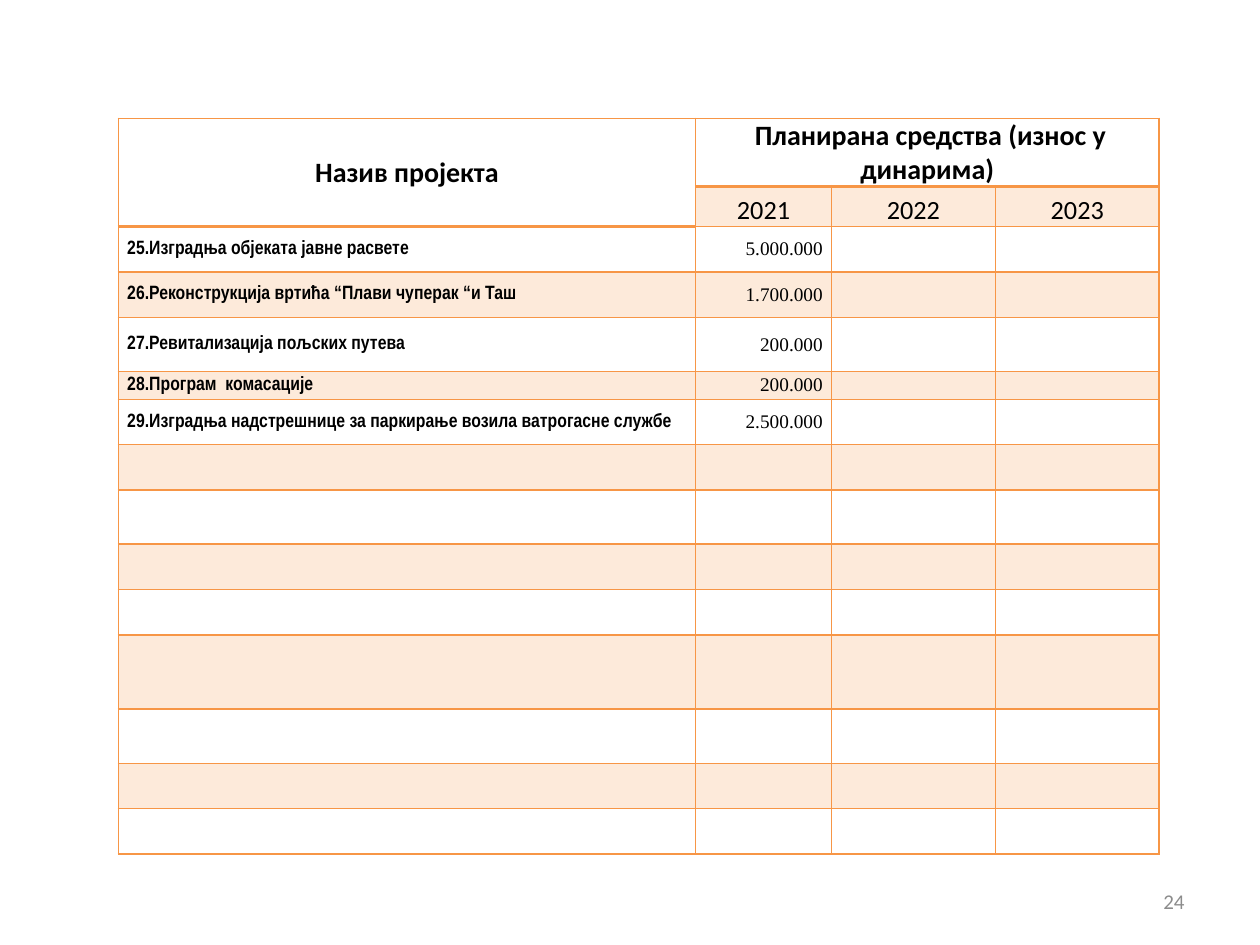
from dataclasses import dataclass

from lxml.etree import SubElement
from pptx import Presentation
from pptx.dml.color import RGBColor
from pptx.enum.text import MSO_ANCHOR as Anchor, PP_ALIGN as Align
from pptx.oxml.ns import qn
from pptx.util import Inches, Pt


@dataclass(frozen=True)
class Theme:
    accent: str = "F79646"
    ink: str = "000000"
    muted: str = "8C8C8C"
    band_alpha: int = 20000
    heading_font: str = "Calibri"
    project_font: str = "Arial Narrow"
    amount_font: str = "Times New Roman"
    heading_size: int = 16
    year_size: int = 15
    body_size: int = 11
    number_size: int = 12
    thin: int = 1
    heavy: int = 2


THEME = Theme()

COLUMN_WIDTHS = [4.58, 1.08, 1.3, 1.3]
ROW_HEIGHTS = [0.54, 0.32, 0.36, 0.36, 0.43, 0.22, 0.36, 0.36,
               0.43, 0.36, 0.36, 0.59, 0.43, 0.36, 0.36]
YEARS = ["2021", "2022", "2023"]
PROJECTS = [
    ("25.Изградња објеката јавне расвете", "5.000.000"),
    ("26.Реконструкција вртића “Плави чуперак “и Таш", "1.700.000"),
    ("27.Ревитализација пољских путева", "200.000"),
    ("28.Програм  комасације", "200.000"),
    ("29.Изградња надстрешнице за паркирање возила ватрогасне службе", "2.500.000"),
]
# Cells whose top edge closes a heading
HEAVY_TOPS = {(1, 1), (1, 2), (1, 3), (2, 0)}


def write(frame, text, font, size, color=THEME.ink, bold=False, align=Align.LEFT):
    frame.text = text
    paragraph = frame.paragraphs[0]
    paragraph.alignment = align
    for run in paragraph.runs:
        run.font.name = font
        run.font.size = Pt(size)
        run.font.bold = bold
        run.font.color.rgb = RGBColor.from_string(color)


def style_cell(cell, row, column):
    """Border, band and margins of one cell, set by its place in the grid."""
    cell.margin_left = cell.margin_right = Inches(0.07)
    cell.margin_top = cell.margin_bottom = 0
    cell.vertical_anchor = Anchor.MIDDLE
    properties = cell._tc.get_or_add_tcPr()
    heavy_edges = {
        "lnT": (row, column) in HEAVY_TOPS,
        "lnB": (row + 1, column) in HEAVY_TOPS or (row, column) == (0, 0),
    }
    for edge in ("lnL", "lnR", "lnT", "lnB"):
        width = THEME.heavy if heavy_edges.get(edge) else THEME.thin
        line = SubElement(properties, qn(f"a:{edge}"), w=str(Pt(width)))
        fill = SubElement(line, qn("a:solidFill"))
        SubElement(fill, qn("a:srgbClr"), val=THEME.accent)

    if row % 2 and (row, column) != (1, 0):
        cell.fill.solid()
        cell.fill.fore_color.rgb = RGBColor.from_string(THEME.accent)
        tint = properties.find(f"{qn('a:solidFill')}/{qn('a:srgbClr')}")
        SubElement(tint, qn("a:alpha"), val=str(THEME.band_alpha))
    else:
        cell.fill.background()

    # Keeps empty cells from stretching the low rows
    paragraph = cell.text_frame.paragraphs[0]
    SubElement(paragraph._p, qn("a:endParaRPr"), sz=str(THEME.body_size * 100))


def add_budget_table(slide, left, top, width, height):
    table = slide.shapes.add_table(
        len(ROW_HEIGHTS), len(COLUMN_WIDTHS), left, top, width, height).table
    table.first_row = table.horz_banding = False
    for column, size in zip(table.columns, COLUMN_WIDTHS):
        column.width = Inches(size)
    for row, size in zip(table.rows, ROW_HEIGHTS):
        row.height = Inches(size)
    for r in range(len(ROW_HEIGHTS)):
        for c in range(len(COLUMN_WIDTHS)):
            style_cell(table.cell(r, c), r, c)

    # Headings
    project_heading, funds_heading = table.cell(0, 0), table.cell(0, 1)
    project_heading.merge(table.cell(1, 0))
    funds_heading.merge(table.cell(0, 3))
    funds_heading.vertical_anchor = Anchor.BOTTOM
    for heading, text in ((project_heading, "Назив пројекта"),
                          (funds_heading, " Планирана средства (износ у динарима)")):
        write(heading.text_frame, text, THEME.heading_font, THEME.heading_size,
              bold=True, align=Align.CENTER)
    for c, year in enumerate(YEARS, start=1):
        year_cell = table.cell(1, c)
        year_cell.vertical_anchor = Anchor.BOTTOM
        write(year_cell.text_frame, year, THEME.heading_font, THEME.year_size,
              align=Align.CENTER)

    # Projects and their amounts
    for r, (project, amount) in enumerate(PROJECTS, start=2):
        write(table.cell(r, 0).text_frame, project, THEME.project_font,
              THEME.body_size, bold=True)
        write(table.cell(r, 1).text_frame, amount, THEME.amount_font,
              THEME.body_size, align=Align.RIGHT)


def add_page_number(slide, left, top, width, height):
    frame = slide.shapes.add_textbox(left, top, width, height).text_frame
    frame.word_wrap = True
    frame.vertical_anchor = Anchor.MIDDLE
    write(frame, "24", THEME.heading_font, THEME.number_size, THEME.muted,
          align=Align.RIGHT)


def main():
    deck = Presentation()
    deck.slide_width, deck.slide_height = Inches(10), Inches(7.5)
    slide = deck.slides.add_slide(deck.slide_layouts[6])
    add_page_number(slide, Inches(7.17), Inches(6.95), Inches(2.33), Inches(0.4))
    add_budget_table(slide, Inches(0.94), Inches(0.94),
                     Inches(sum(COLUMN_WIDTHS)), Inches(sum(ROW_HEIGHTS)))
    deck.save("out.pptx")


if __name__ == "__main__":
    main()
